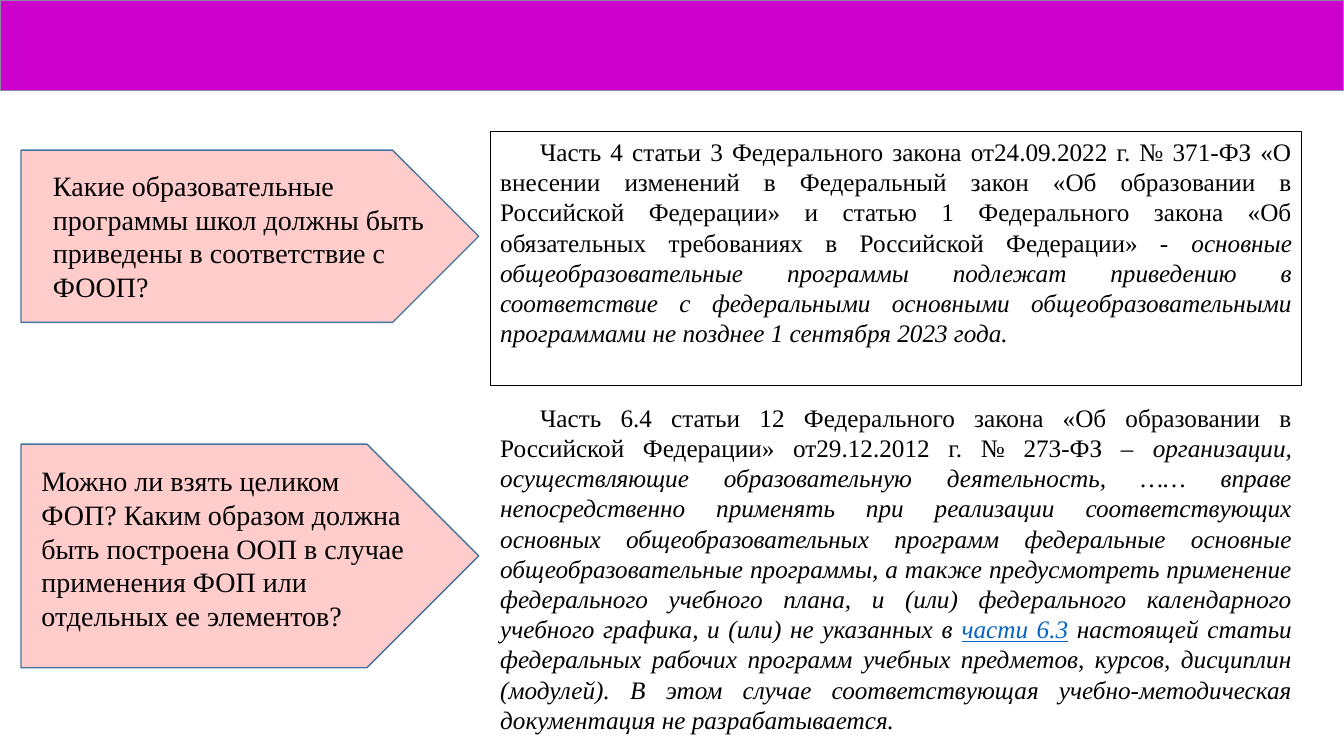
from pptx import Presentation
from pptx.dml.color import RGBColor
from pptx.enum.shapes import MSO_SHAPE
from pptx.enum.text import MSO_ANCHOR, PP_ALIGN
from pptx.util import Pt

RECTANGLE = MSO_SHAPE.RECTANGLE
PENTAGON = MSO_SHAPE.PENTAGON
TOP = MSO_ANCHOR.TOP
LEFT, JUSTIFY = PP_ALIGN.LEFT, PP_ALIGN.JUSTIFY
EMU_PER_PIXEL = 9525
BLANK_LAYOUT = 6

COLORS = {
    "band": "CC00CC",
    "band_line": "8E87A3",
    "arrow": "FFCCCC",
    "arrow_line": "43739E",
    "text": "000000",
    "reference": "0563C1",
}
PLAIN = {}
ITALIC = {"italic": True}
REFERENCE = {"italic": True, "underline": True, "color": "reference"}

QUESTIONS = [
    ((20, 143, 436, 164), (41, 156, 381, 139),
     "Какие образовательные программы школ должны быть приведены в соответствие с ФООП?"),
    ((20, 423, 436, 213), (30, 437, 381, 113),
     "Можно ли взять целиком ФОП? Каким образом должна быть построена ООП "
     "в случае применения ФОП или отдельных ее элементов?"),
]
FIRST_ANSWER = [
    ("Часть 4 статьи 3 Федерального закона от24.09.2022 г. № 371-ФЗ «О внесении "
     "изменений в Федеральный закон «Об образовании в Российской Федерации» и статью 1 "
     "Федерального закона «Об обязательных требованиях в Российской Федерации» - ", PLAIN),
    ("основные общеобразовательные программы подлежат приведению в соответствие с "
     "федеральными основными общеобразовательными программами не позднее "
     "1 сентября 2023 года.", ITALIC),
]
SECOND_ANSWER = [
    ("Часть 6.4 статьи 12 Федерального закона «Об образовании в Российской Федерации» "
     "от29.12.2012 г. № 273-ФЗ – ", PLAIN),
    ("организации, осуществляющие образовательную деятельность, …… вправе непосредственно "
     "применять при реализации соответствующих основных общеобразовательных программ "
     "федеральные основные общеобразовательные программы, а также предусмотреть применение "
     "федерального учебного плана, и (или) федерального календарного учебного графика, "
     "и (или) не указанных в ", ITALIC),
    ("части 6.3", REFERENCE),
    (" настоящей статьи федеральных рабочих программ учебных предметов, курсов, дисциплин "
     "(модулей). В этом случае соответствующая учебно-методическая документация "
     "не разрабатывается.", ITALIC),
]


def pixels(*values):
    return [value * EMU_PER_PIXEL for value in values]


class SlideBuilder:
    font_name = "Times New Roman"
    question_size = 20
    answer_size = 18
    first_line_indent = 38

    def __init__(self, slide):
        self.slide = slide

    def color(self, name):
        return RGBColor.from_string(COLORS[name])

    def shape(self, kind, box, line, line_width, fill=None, parent=None):
        shape = (parent or self.slide).shapes.add_shape(kind, *pixels(*box))
        shape.shadow.inherit = False
        if fill:
            shape.fill.solid()
            shape.fill.fore_color.rgb = self.color(fill)
        else:
            shape.fill.background()
        shape.line.color.rgb = self.color(line)
        shape.line.width = Pt(line_width)
        return shape

    def text(self, shape, runs, size, alignment=LEFT, indent=0):
        frame = shape.text_frame
        for name, value in {"word_wrap": True, "vertical_anchor": TOP}.items():
            setattr(frame, name, value)
        paragraph = frame.paragraphs[0]
        paragraph.alignment = alignment
        if indent:
            properties = paragraph._p.get_or_add_pPr()
            properties.set("marL", "0")
            properties.set("indent", str(indent * EMU_PER_PIXEL))
        for content, style in runs:
            run = paragraph.add_run()
            run.text = content
            values = {"name": self.font_name, "size": Pt(size), **style}
            run.font.color.rgb = self.color(values.pop("color", "text"))
            for name, value in values.items():
                setattr(run.font, name, value)

    def question(self, arrow_box, text_box, content):
        group = self.slide.shapes.add_group_shape()
        self.shape(PENTAGON, arrow_box, "arrow_line", 1, "arrow", group)
        label = group.shapes.add_textbox(*pixels(*text_box))
        self.text(label, [(content, PLAIN)], self.question_size)

    def answer(self, box, runs, framed=False):
        if framed:
            shape = self.shape(RECTANGLE, box, "text", 0.75)
        else:
            shape = self.slide.shapes.add_textbox(*pixels(*box))
        self.text(shape, runs, self.answer_size, JUSTIFY, self.first_line_indent)


def main():
    presentation = Presentation()
    presentation.slide_width, presentation.slide_height = pixels(1280, 720)
    slide = presentation.slides.add_slide(presentation.slide_layouts[BLANK_LAYOUT])
    builder = SlideBuilder(slide)
    builder.shape(RECTANGLE, (0, 0, 1280, 86), "band_line", 0.75, "band")
    for question in QUESTIONS:
        builder.question(*question)
    builder.answer((467, 125, 773, 242), FIRST_ANSWER, framed=True)
    builder.answer((467, 378, 773, 359), SECOND_ANSWER)
    presentation.save("out.pptx")


if __name__ == "__main__":
    main()
